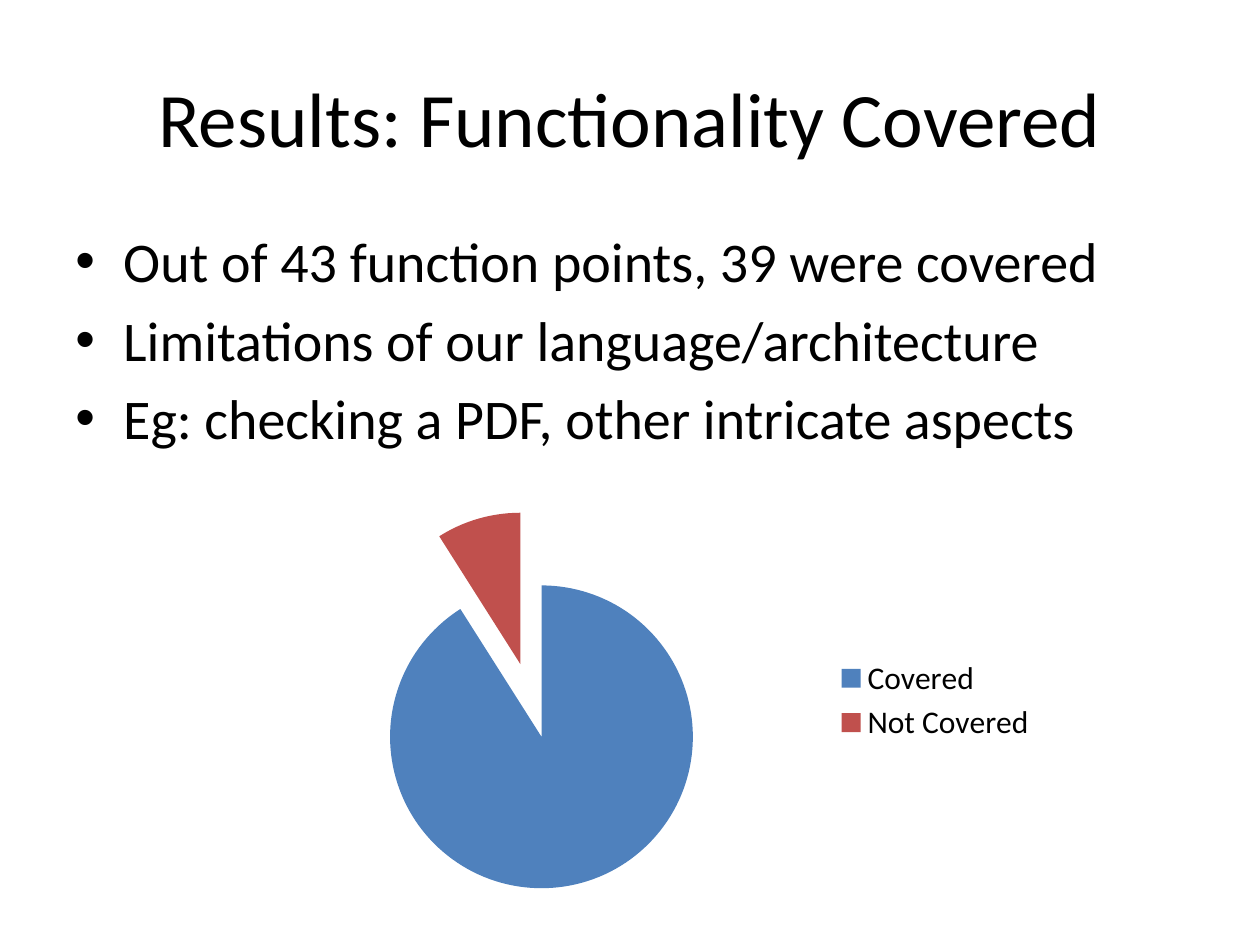
from lxml.etree import SubElement
from pptx import Presentation
from pptx.chart.data import CategoryChartData
from pptx.dml.color import RGBColor
from pptx.enum.chart import XL_CHART_TYPE, XL_LEGEND_POSITION
from pptx.enum.text import MSO_ANCHOR, PP_ALIGN
from pptx.oxml.ns import qn
from pptx.util import Inches, Pt

COLORS = {"text": "000000", "Covered": "4F81BD", "Not Covered": "C0504D"}
FONT = "Calibri"
SHARES = {"Covered": 91, "Not Covered": 9}
POINTS = [
    "Out of 43 function points, 39 were covered",
    "Limitations of our language/architecture",
    "Eg: checking a PDF, other intricate aspects",
]


def style_font(font, size):
    font.name = FONT
    font.size = Pt(size)
    font.color.rgb = RGBColor.from_string(COLORS["text"])


def add_span(para, text, size):
    span = para.add_run()
    span.text = text
    style_font(span.font, size)


deck = Presentation()
deck.slide_width = Inches(10)
deck.slide_height = Inches(7.5)
page = deck.slides.add_slide(deck.slide_layouts[6])

title_box = page.shapes.add_textbox(Inches(0.5), Inches(0.3), Inches(9), Inches(1.25))
title_box.text_frame.word_wrap = True
title_box.text_frame.vertical_anchor = MSO_ANCHOR.MIDDLE
title_para = title_box.text_frame.paragraphs[0]
title_para.alignment = PP_ALIGN.CENTER
add_span(title_para, "Results: Functionality Covered", 44)

body_box = page.shapes.add_textbox(Inches(0.5), Inches(1.75), Inches(9), Inches(4.95))
body = body_box.text_frame
body.word_wrap = True
for index, point in enumerate(POINTS):
    para = body.add_paragraph() if index else body.paragraphs[0]
    properties = para._p.get_or_add_pPr()
    properties.set("marL", str(Inches(0.38)))
    properties.set("indent", str(-Inches(0.38)))
    spacing = SubElement(properties, qn("a:spcBef"))
    SubElement(spacing, qn("a:spcPct"), val="20000")
    SubElement(properties, qn("a:buFont"), typeface="Arial")
    SubElement(properties, qn("a:buChar"), char="•")
    add_span(para, point, 32)

chart_data = CategoryChartData()
chart_data.categories = list(SHARES)
chart_data.add_series("Series 1", list(SHARES.values()))
chart = page.shapes.add_chart(
    XL_CHART_TYPE.PIE_EXPLODED,
    Inches(1.83), Inches(3.92), Inches(6.5), Inches(3.28),
    chart_data,
).chart
style_font(chart.font, 18)
chart.has_title = False
chart.has_legend = True
chart.legend.position = XL_LEGEND_POSITION.RIGHT
chart.legend.include_in_layout = False

pie = chart.plots[0]
pie.vary_by_categories = True
series = pie.series[0]
explosion = series._element.find(qn("c:explosion"))
explosion.set("val", "25")
for index, category in enumerate(SHARES):
    fill = series.points[index].format.fill
    fill.solid()
    fill.fore_color.rgb = RGBColor.from_string(COLORS[category])

deck.save("out.pptx")
